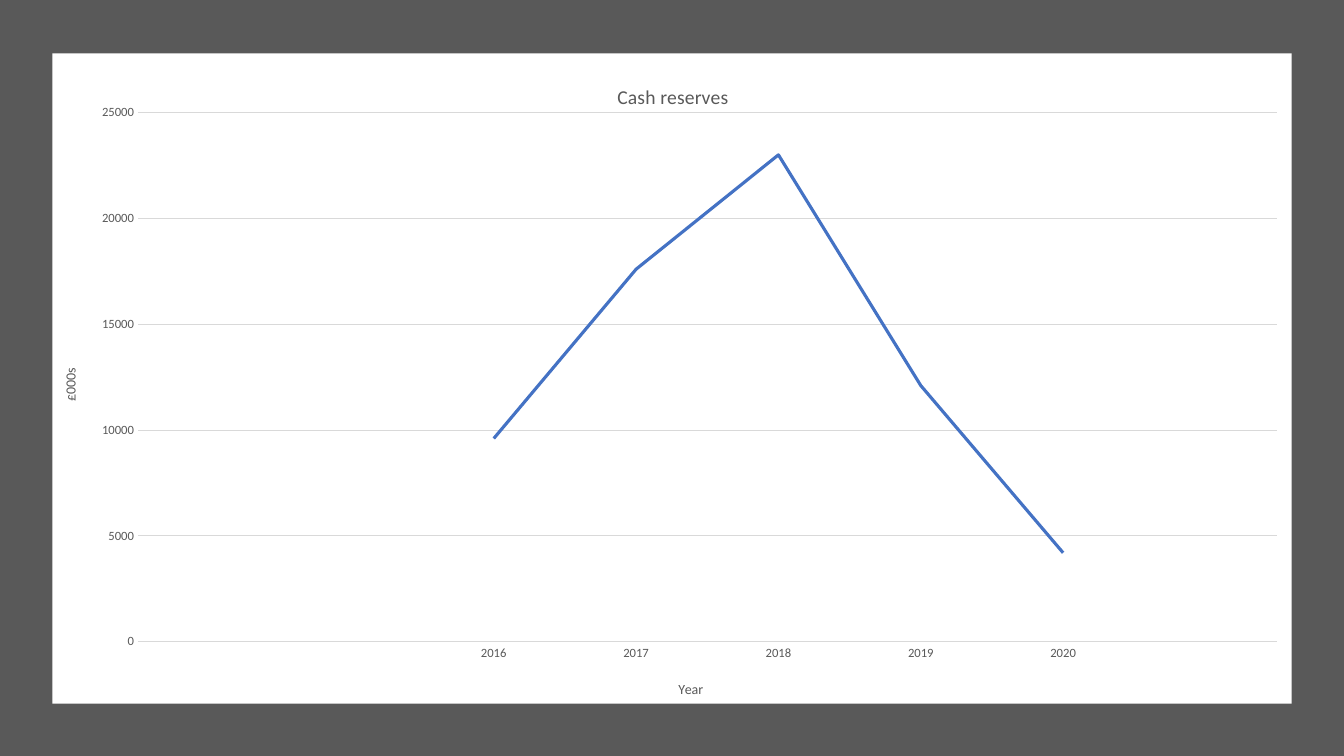
from lxml import etree
from pptx import Presentation
from pptx import util as u
from pptx.chart.data import CategoryChartData
from pptx.dml.color import RGBColor
from pptx.enum import chart as ch, shapes
from pptx.oxml.ns import qn

HUE = {"back": "595959", "card": "FFFFFF", "text": "595959", "grid": "D9D9D9", "line": "4472C4"}
HUE = {name: RGBColor.from_string(code) for name, code in HUE.items()}


def place(node, **parts):
    for old in node.findall(qn("c:manualLayout")):
        node.remove(old)
    spot = etree.SubElement(node, qn("c:manualLayout"))
    for key, val in parts.items():
        etree.SubElement(spot, qn("c:" + key)).set("val", str(val))


deck = Presentation()
deck.slide_width, deck.slide_height = u.Inches(13.33), u.Inches(7.5)
slide = deck.slides.add_slide(deck.slide_layouts[6])

full = (0, 0, deck.slide_width, deck.slide_height)
card = [u.Inches(n) for n in (0.52, 0.53, 12.29, 6.45)]
for box, hue in ((full, "back"), (card, "card")):
    rect = slide.shapes.add_shape(shapes.MSO_SHAPE.RECTANGLE, *box)
    rect.shadow.inherit = False
    rect.fill.solid()
    rect.fill.fore_color.rgb = HUE[hue]
    rect.line.fill.background()

data = CategoryChartData()
data.categories = ["", "", "2016", "2017", "2018", "2019", "2020", ""]
data.add_series("Series 1", [None, None, 9600, 17600, 23000, 12100, 4200, None])
chart = slide.shapes.add_chart(ch.XL_CHART_TYPE.LINE, *card, data).chart
chart.has_legend = False
chart.font.name = "Calibri"
chart.font.size = u.Pt(10)

plot = chart.plots[0]
plot.vary_by_categories = False
cash = plot.series[0]
cash.smooth = False
cash.marker.style = ch.XL_MARKER_STYLE.NONE
cash.format.line.color.rgb = HUE["line"]
cash.format.line.width = u.Pt(2.25)

years, money = chart.category_axis, chart.value_axis
for axis in (years, money):
    axis.major_tick_mark = axis.minor_tick_mark = ch.XL_TICK_MARK.NONE
    axis.tick_labels.font.size = u.Pt(9)
    axis.tick_labels.font.name = "Calibri"
    axis.tick_labels.font.color.rgb = HUE["text"]
money.minimum_scale, money.maximum_scale, money.major_unit = 0, 25000, 5000
money.format.line.fill.background()
for line in (years.format.line, money.major_gridlines.format.line):
    line.color.rgb = HUE["grid"]
    line.width = u.Pt(0.75)

for owner, words, size, left, top in (
    (chart, "Cash reserves", 14, 0.453, 0.04),
    (years, "Year", 10, 0.503, 0.96),
    (money, "£000s", 10, 0.005, 0.48),
):
    owner.has_title = True
    title = owner.chart_title if owner is chart else owner.axis_title
    para = title.text_frame.paragraphs[0]
    para.text = words
    para.font.size = u.Pt(size)
    para.font.name = "Calibri"
    para.font.bold = False
    para.font.color.rgb = HUE["text"]
    node = title.text_frame._txBody.getparent().getparent()
    place(node.find(qn("c:layout")), xMode="edge", yMode="edge", x=left, y=top)
body = money.axis_title.text_frame._txBody.find(qn("a:bodyPr"))
body.set("rot", "-5400000")
body.set("vert", "horz")

area = chart._chartSpace.chart.plotArea
frame = area.find(qn("c:layout"))
if frame is None:
    frame = etree.Element(qn("c:layout"))
    area.insert(0, frame)
place(frame, layoutTarget="inner", xMode="edge", yMode="edge", x=0.069, y=0.091, w=0.919, h=0.814)

deck.save("out.pptx")
